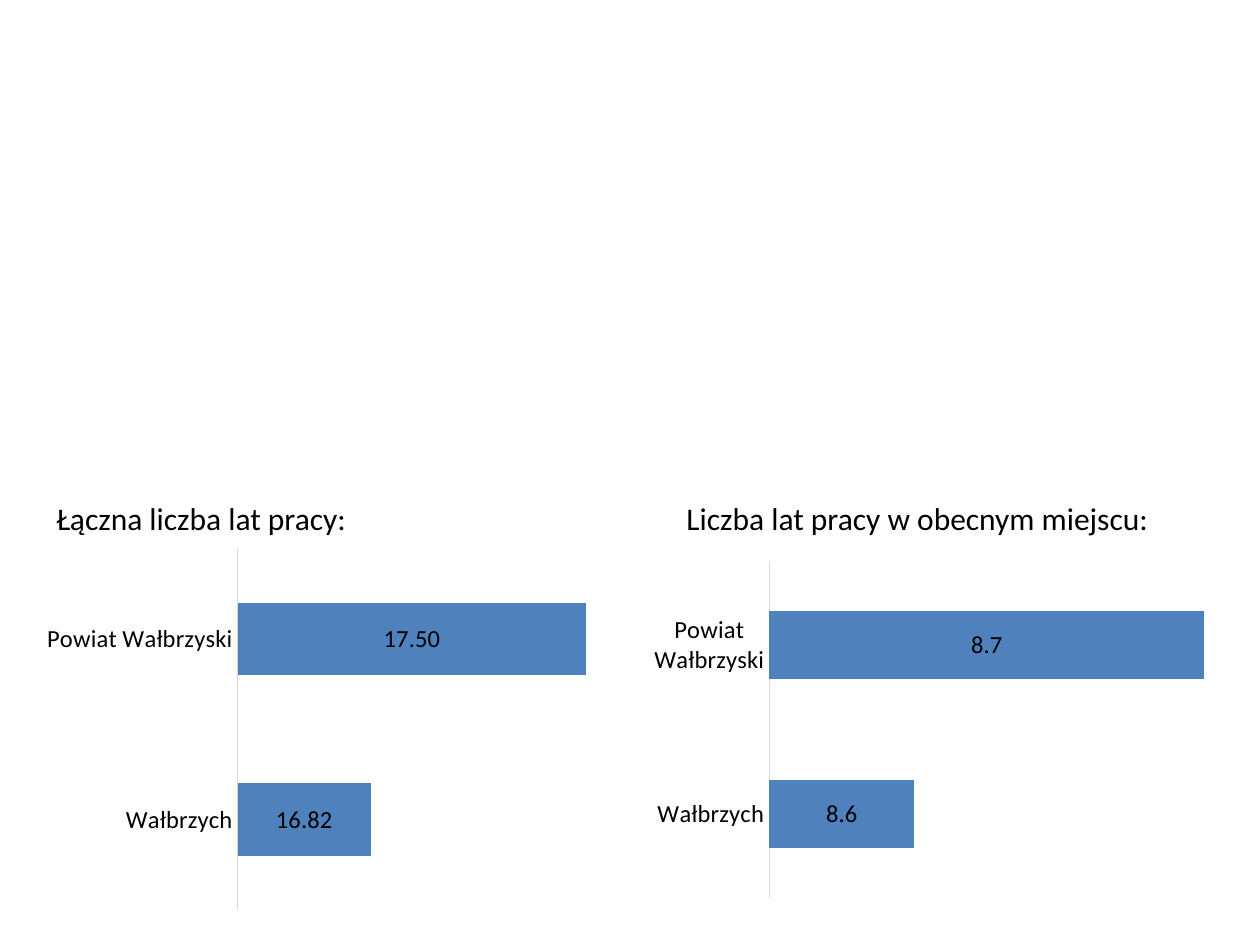
import pptx
import pptx.chart.data
import pptx.dml.color
import pptx.enum.chart
import pptx.enum.text
import pptx.util
from lxml import etree
from pptx.oxml.ns import qn

Inches = pptx.util.Inches
Pt = pptx.util.Pt

COLORS = {"text": "000000", "bar": "4F81BD", "axis": "D9D9D9", "background": "FFFFFF"}
FONT = "Calibri"
PLACES = ["Wałbrzych", "Powiat Wałbrzyski"]


def rgb(name):
    return pptx.dml.color.RGBColor.from_string(COLORS[name])


def set_font(font, size):
    for attribute, value in {"name": FONT, "size": Pt(size)}.items():
        setattr(font, attribute, value)
    font.color.rgb = rgb("text")


def add_headings(slide, box, headings):
    """Write the headings on one line, parted by a tab stop at mid-slide."""
    heading_box = slide.shapes.add_textbox(*map(Inches, box))
    frame = heading_box.text_frame
    frame.word_wrap = True
    frame.auto_size = pptx.enum.text.MSO_AUTO_SIZE.SHAPE_TO_FIT_TEXT
    line = frame.paragraphs[0]
    stops = etree.SubElement(line._p.get_or_add_pPr(), qn("a:tabLst"))
    etree.SubElement(stops, qn("a:tab"), pos=str(Inches(5)), algn="l")
    run = line.add_run()
    run.text = "\t".join(headings)
    set_font(run.font, 18)


def fill_background(chart):
    properties = etree.Element(qn("c:spPr"))
    fill = etree.SubElement(properties, qn("a:solidFill"))
    etree.SubElement(fill, qn("a:srgbClr"), val=COLORS["background"])
    line = etree.SubElement(properties, qn("a:ln"))
    etree.SubElement(line, qn("a:noFill"))
    chart._chartSpace.find(qn("c:chart")).addnext(properties)


def set_inner_plot(chart, plot_box):
    """Place the plot by fractions of the chart: left, top, width, height."""
    plot_area = chart._chartSpace.find(qn("c:chart")).find(qn("c:plotArea"))
    layout = plot_area.find(qn("c:layout"))
    if layout is None:
        layout = etree.Element(qn("c:layout"))
        plot_area.insert(0, layout)
    manual = etree.SubElement(layout, qn("c:manualLayout"))
    settings = {"layoutTarget": "inner", "xMode": "edge", "yMode": "edge"}
    settings.update(zip("xywh", plot_box))
    for tag, value in settings.items():
        etree.SubElement(manual, qn(f"c:{tag}"), val=str(value))


def add_years_chart(slide, box, years, number_format, scale, plot_box=None):
    data = pptx.chart.data.CategoryChartData(number_format=number_format)
    data.categories = PLACES
    data.add_series("Series 1", years)
    chart = slide.shapes.add_chart(
        pptx.enum.chart.XL_CHART_TYPE.BAR_STACKED, *map(Inches, box), data
    ).chart
    chart.has_legend = False
    chart.has_title = False
    set_font(chart.font, 14)
    fill_background(chart)
    if plot_box:
        set_inner_plot(chart, plot_box)

    place_axis = chart.category_axis
    no_tick = pptx.enum.chart.XL_TICK_MARK.NONE
    for attribute, value in {
        "major_tick_mark": no_tick,
        "minor_tick_mark": no_tick,
        "has_major_gridlines": False,
    }.items():
        setattr(place_axis, attribute, value)
    place_axis.format.line.color.rgb = rgb("axis")
    place_axis.format.line.width = Pt(0.75)

    years_axis = chart.value_axis
    for attribute, value in {
        "visible": False,
        "has_major_gridlines": False,
        "minimum_scale": scale[0],
        "maximum_scale": scale[1],
    }.items():
        setattr(years_axis, attribute, value)

    bars = chart.plots[0]
    for attribute, value in {
        "gap_width": 150,
        "overlap": 100,
        "vary_by_categories": False,
        "has_data_labels": True,
    }.items():
        setattr(bars, attribute, value)
    bar_fill = bars.series[0].format.fill
    bar_fill.solid()
    bar_fill.fore_color.rgb = rgb("bar")
    labels = bars.data_labels
    for attribute, value in {
        "show_value": True,
        "number_format": number_format,
        "number_format_is_linked": False,
    }.items():
        setattr(labels, attribute, value)
    set_font(labels.font, 14)


def main():
    deck = pptx.Presentation()
    deck.slide_width, deck.slide_height = Inches(10), Inches(7.5)
    slide = deck.slides.add_slide(deck.slide_layouts[6])
    add_years_chart(
        slide, (0.28, 4.3, 4.72, 2.98), (16.82, 17.5), "###0.00", (16.4, 17.6)
    )
    add_years_chart(
        slide, (5.01, 4.3, 4.98, 2.98), (8.6, 8.7), "###0.0", (8.55, 8.71),
        plot_box=(0.22, 0.05, 0.74, 0.9),
    )
    add_headings(
        slide, (0.35, 3.91, 9.53, 0.4),
        ("Łączna liczba lat pracy:", "Liczba lat pracy w obecnym miejscu:"),
    )
    deck.save("out.pptx")


if __name__ == "__main__":
    main()
